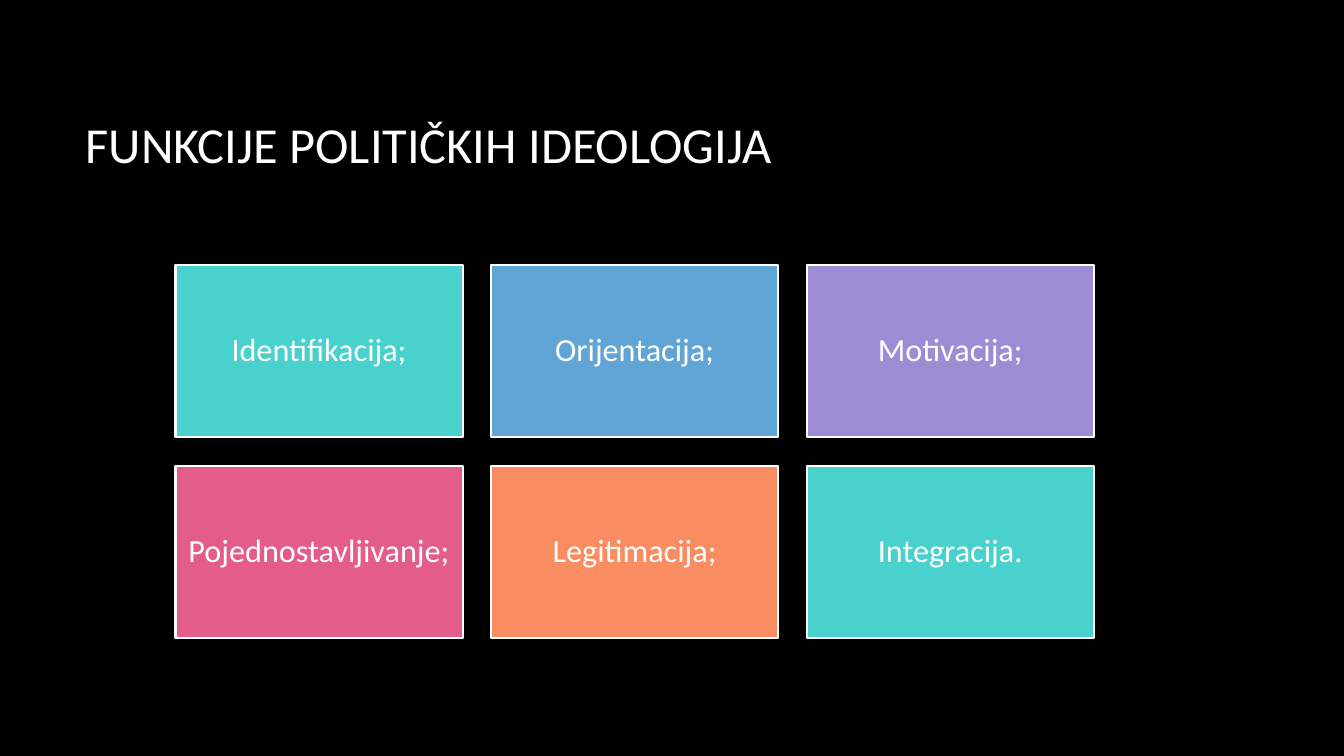
from dataclasses import dataclass

import pptx
import pptx.dml.color
import pptx.enum.shapes
import pptx.enum.text
import pptx.slide
import pptx.text.text
import pptx.util

RGBColor = pptx.dml.color.RGBColor
Inches = pptx.util.Inches
Pt = pptx.util.Pt
PP_ALIGN = pptx.enum.text.PP_ALIGN
MSO_ANCHOR = pptx.enum.text.MSO_ANCHOR

BLACK = RGBColor(0x00, 0x00, 0x00)
WHITE = RGBColor(0xFF, 0xFF, 0xFF)
TURQUOISE = RGBColor(0x49, 0xD1, 0xCD)
BLUE = RGBColor(0x61, 0xA5, 0xD6)
PURPLE = RGBColor(0x9D, 0x8C, 0xD3)
PINK = RGBColor(0xE4, 0x5C, 0x8A)
ORANGE = RGBColor(0xF9, 0x8C, 0x61)

FONT = "Calibri"
COLUMNS = 3
GRID_LEFT, GRID_TOP = 1.74, 2.63
CARD_WIDTH, CARD_HEIGHT = 2.85, 1.71
GAP = 0.28


@dataclass(frozen=True)
class Card:
    label: str
    fill: RGBColor


CARDS = [
    Card("Identifikacija;", TURQUOISE),
    Card("Orijentacija;", BLUE),
    Card("Motivacija;", PURPLE),
    Card("Pojednostavljivanje;", PINK),
    Card("Legitimacija;", ORANGE),
    Card("Integracija.", TURQUOISE),
]


def write_text(tf: pptx.text.text.TextFrame, text: str, size: float,
               align: PP_ALIGN) -> None:
    tf.text = text
    tf.word_wrap = True
    tf.auto_size = pptx.enum.text.MSO_AUTO_SIZE.NONE
    tf.vertical_anchor = MSO_ANCHOR.MIDDLE
    p = tf.paragraphs[0]
    p.alignment = align
    p.line_spacing = 0.9
    r = p.runs[0]
    r.font.name = FONT
    r.font.size = Pt(size)
    r.font.color.rgb = WHITE


def add_title(s: pptx.slide.Slide, text: str) -> None:
    sp = s.shapes.title
    sp.left, sp.top = Inches(0.75), Inches(0.67)
    sp.width, sp.height = Inches(11.08), Inches(1.59)
    write_text(sp.text_frame, text, 36, PP_ALIGN.LEFT)


def add_card(s: pptx.slide.Slide, card: Card, row: int, column: int) -> None:
    sp = s.shapes.add_shape(
        pptx.enum.shapes.MSO_SHAPE.RECTANGLE,
        Inches(GRID_LEFT + column * (CARD_WIDTH + GAP)),
        Inches(GRID_TOP + row * (CARD_HEIGHT + GAP)),
        Inches(CARD_WIDTH),
        Inches(CARD_HEIGHT),
    )
    sp.shadow.inherit = False
    sp.fill.solid()
    sp.fill.fore_color.rgb = card.fill
    sp.line.color.rgb = WHITE
    sp.line.width = Pt(1.5)
    tf = sp.text_frame
    tf.margin_left = tf.margin_right = Inches(0.1)
    tf.margin_top = tf.margin_bottom = Inches(0.1)
    write_text(tf, card.label, 23, PP_ALIGN.CENTER)


def main() -> None:
    prs = pptx.Presentation()
    prs.slide_width, prs.slide_height = Inches(13.33), Inches(7.5)
    s = prs.slides.add_slide(prs.slide_layouts.get_by_name("Title Only"))
    s.background.fill.solid()
    s.background.fill.fore_color.rgb = BLACK
    add_title(s, "FUNKCIJE POLITIČKIH IDEOLOGIJA")
    for i, card in enumerate(CARDS):
        row, column = divmod(i, COLUMNS)
        add_card(s, card, row, column)
    prs.save("out.pptx")


if __name__ == "__main__":
    main()
